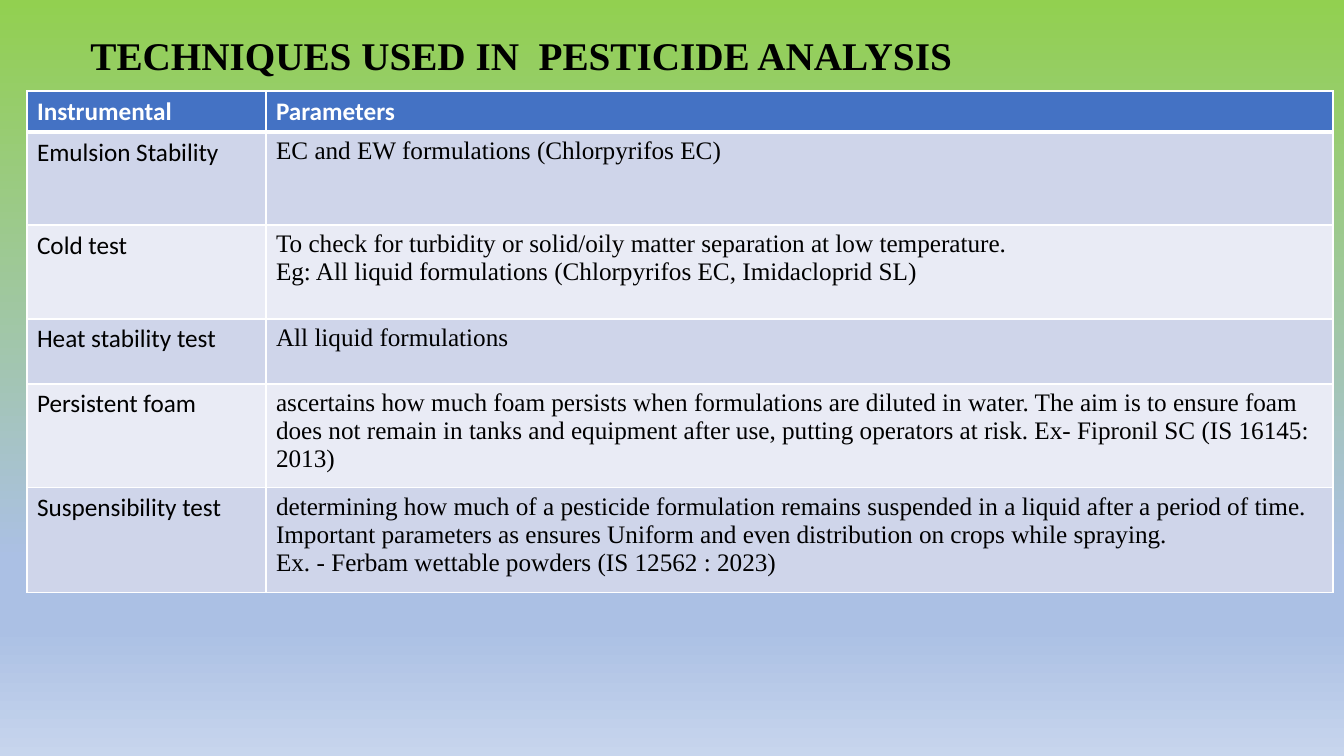
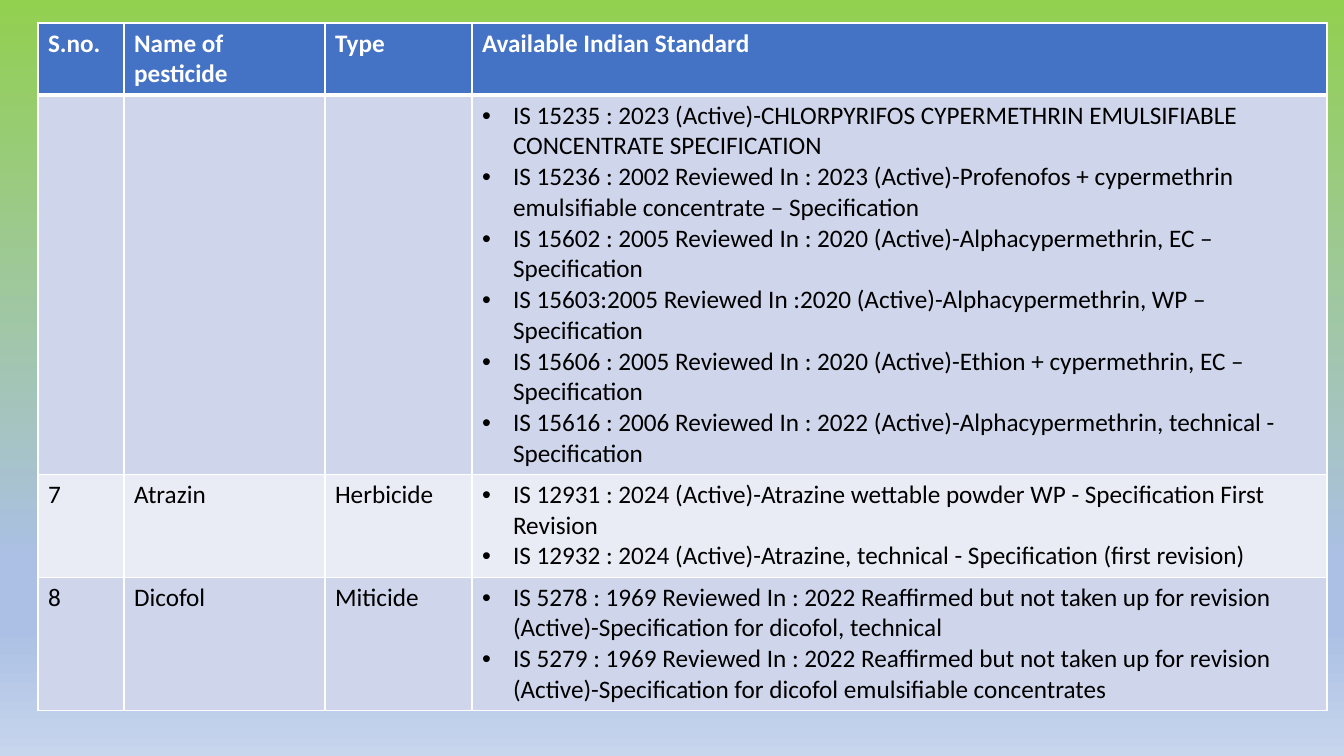
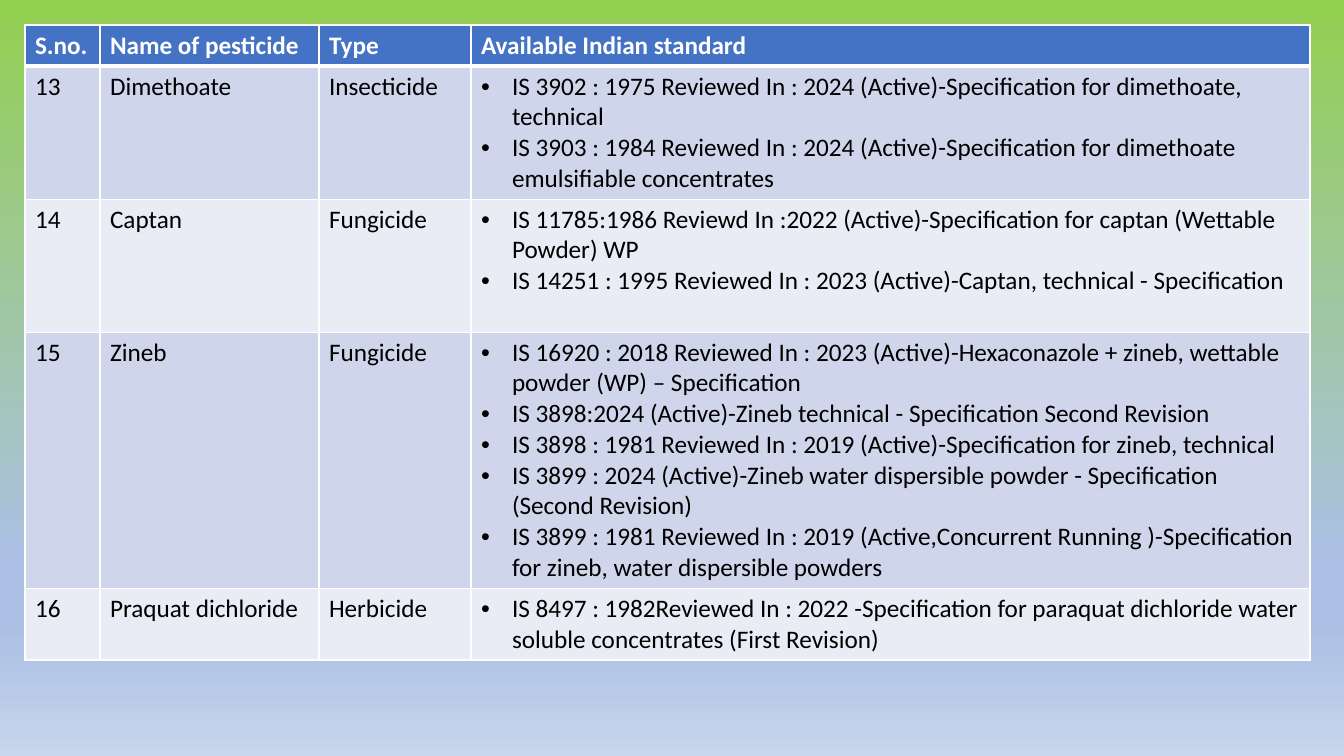
"""Build three slides of pesticide analysis tables."""
from dataclasses import dataclass

from lxml.etree import SubElement
from pptx import Presentation
from pptx.dml.color import RGBColor as Rgb
from pptx.enum.text import MSO_ANCHOR as Anchor, PP_ALIGN as Align
from pptx.oxml.ns import qn
from pptx.util import Emu, Pt

EMU_PER_PX = 914400 / 100.8
TITLE_ONLY, BLANK = 5, 6


@dataclass(frozen=True)
class Theme:
    sans: str = "Calibri"
    serif: str = "Times New Roman"
    ink: str = "000000"
    header_ink: str = "FFFFFF"
    header_fill: str = "4472C4"
    bands: tuple[str, ...] = ("CFD5EA", "E9EBF5")
    border: str = "FFFFFF"
    thin: int = 1
    thick: int = 3
    body_size: int = 18
    title_size: int = 28
    title_lead_size: int = 44
    backdrop: tuple[tuple[int, str], ...] = (
        (0, "92D050"), (74, "ABC0E4"), (83, "ABC0E4"), (100, "C7D5ED"))


@dataclass(frozen=True)
class Row:
    height: int
    labels: tuple[str, ...]
    details: tuple[str, ...]


@dataclass(frozen=True)
class Sheet:
    left: int
    top: int
    columns: tuple[int, ...]
    rows: tuple[Row, ...]
    detail_font: str
    bullet_indent: int = 0
    title: str = ""


THEME = Theme()

SHEETS = (
    Sheet(27, 91, (239, 1067), (
        Row(41, ("Instrumental",), ("Parameters",)),
        Row(93, ("Emulsion Stability",), ("EC and EW formulations (Chlorpyrifos EC)",)),
        Row(94, ("Cold test",), (
            "To check for turbidity or solid/oily matter separation at low temperature.",
            "Eg: All liquid formulations (Chlorpyrifos EC, Imidacloprid SL)")),
        Row(65, ("Heat stability test",), ("All liquid formulations",)),
        Row(104, ("Persistent foam",), (
            "ascertains how much foam persists when formulations are diluted in water. "
            "The aim is to ensure foam does not remain in tanks and equipment after use, "
            "putting operators at risk. Ex- Fipronil SC (IS 16145: 2013)",)),
        Row(105, ("Suspensibility test",), (
            "determining how much of a pesticide formulation remains suspended in a liquid "
            "after a period of time.",
            "Important parameters as ensures Uniform and even distribution on crops while spraying.",
            "Ex. - Ferbam wettable powders (IS 12562 : 2023)")),
    ), THEME.serif, title="TECHNIQUES USED IN  PESTICIDE ANALYSIS"),
    Sheet(38, 23, (86, 201, 147, 855), (
        Row(72, ("S.no.", "Name of pesticide", "Type"), ("Available Indian Standard",)),
        Row(379, ("", "", ""), (
            "IS 15235 : 2023 (Active)-CHLORPYRIFOS CYPERMETHRIN EMULSIFIABLE CONCENTRATE SPECIFICATION",
            "IS 15236 : 2002 Reviewed In : 2023 (Active)-Profenofos + cypermethrin "
            "emulsifiable concentrate – Specification",
            "IS 15602 : 2005 Reviewed In : 2020 (Active)-Alphacypermethrin, EC – Specification",
            "IS 15603:2005 Reviewed In :2020 (Active)-Alphacypermethrin, WP – Specification",
            "IS 15606 : 2005 Reviewed In : 2020 (Active)-Ethion + cypermethrin, EC – Specification",
            "IS 15616 : 2006 Reviewed In : 2022 (Active)-Alphacypermethrin, technical - Specification")),
        Row(103, ("7", "Atrazin", "Herbicide"), (
            "IS 12931 : 2024 (Active)-Atrazine wettable powder WP - Specification First Revision",
            "IS 12932 : 2024 (Active)-Atrazine, technical - Specification (first revision)")),
        Row(133, ("8", "Dicofol", "Miticide"), (
            "IS 5278 : 1969 Reviewed In : 2022 Reaffirmed but not taken up for revision "
            "(Active)-Specification for dicofol, technical",
            "IS 5279 : 1969 Reviewed In : 2022 Reaffirmed but not taken up for revision "
            "(Active)-Specification for dicofol emulsifiable concentrates")),
    ), THEME.sans, bullet_indent=31),
    Sheet(25, 25, (75, 219, 152, 839), (
        Row(41, ("S.no.", "Name of pesticide", "Type"), ("Available Indian standard",)),
        Row(133, ("13", "Dimethoate", "Insecticide"), (
            "IS 3902 : 1975 Reviewed In : 2024 (Active)-Specification for dimethoate, technical",
            "IS 3903 : 1984 Reviewed In : 2024 (Active)-Specification for dimethoate "
            "emulsifiable concentrates")),
        Row(133, ("14", "Captan", "Fungicide"), (
            "IS 11785:1986 Reviewd In :2022 (Active)-Specification for captan (Wettable Powder) WP",
            "IS 14251 : 1995 Reviewed In : 2023 (Active)-Captan, technical - Specification")),
        Row(256, ("15", "Zineb", "Fungicide"), (
            "IS 16920 : 2018 Reviewed In : 2023 (Active)-Hexaconazole + zineb, wettable powder "
            "(WP) – Specification",
            "IS 3898:2024 (Active)-Zineb technical - Specification Second Revision",
            "IS 3898 : 1981 Reviewed In : 2019 (Active)-Specification for zineb, technical",
            "IS 3899 : 2024 (Active)-Zineb water dispersible powder - Specification (Second Revision)",
            "IS 3899 : 1981 Reviewed In : 2019 (Active,Concurrent Running )-Specification "
            "for zineb, water dispersible powders")),
        Row(71, ("16", "Praquat dichloride", "Herbicide"), (
            "IS 8497 : 1982Reviewed In : 2022 -Specification for paraquat dichloride water "
            "soluble concentrates (First Revision)",)),
    ), THEME.sans, bullet_indent=31),
)


def px(length: int) -> Emu:
    """Turn pixels into EMU."""
    return Emu(round(length * EMU_PER_PX))


def add_span(para, text: str, size: int, font: str, color: str, bold: bool) -> None:
    """Append one formatted run."""
    span = para.add_run()
    span.text = text
    span.font.size = Pt(size)
    span.font.name = font
    span.font.bold = bold
    span.font.color.rgb = Rgb.from_string(color)


def paint_backdrop(master) -> None:
    """Give every slide the shared vertical gradient."""
    fill = master.background.fill
    fill.gradient()
    fill.gradient_angle = 270
    stops = next(master.element.iter(qn("a:gsLst")))
    for stop in list(stops):
        stops.remove(stop)
    for percent, color in THEME.backdrop:
        stop = SubElement(stops, qn("a:gs"), pos=str(percent * 1000))
        SubElement(stop, qn("a:srgbClr"), val=color)


def set_bullet(para, indent: int) -> None:
    """Hang a round bullet in front of a paragraph."""
    props = para._p.get_or_add_pPr()
    props.set("marL", str(px(indent)))
    props.set("indent", str(-px(indent)))
    SubElement(props, qn("a:buFont"), typeface="Arial")
    SubElement(props, qn("a:buChar"), char="•")


def set_borders(cell, top: int, bottom: int) -> None:
    """Draw the four cell borders, with widths in points."""
    props = cell._tc.get_or_add_tcPr()
    widths = {"a:lnL": THEME.thin, "a:lnR": THEME.thin, "a:lnT": top, "a:lnB": bottom}
    for position, (side, width) in enumerate(widths.items()):
        line = SubElement(props, qn(side), w=str(Pt(width)))
        paint = SubElement(line, qn("a:solidFill"))
        SubElement(paint, qn("a:srgbClr"), val=THEME.border)
        props.insert(position, line)


def fill_cell(cell, texts: tuple[str, ...], row: int, font: str, indent: int) -> None:
    """Write and format one table cell."""
    header = row == 0
    color = THEME.header_fill if header else THEME.bands[(row - 1) % len(THEME.bands)]
    cell.fill.solid()
    cell.fill.fore_color.rgb = Rgb.from_string(color)
    set_borders(cell, THEME.thick if row == 1 else THEME.thin,
                THEME.thick if header else THEME.thin)
    frame = cell.text_frame
    for index, text in enumerate(texts):
        para = frame.add_paragraph() if index else frame.paragraphs[0]
        if indent and not header:
            set_bullet(para, indent)
        if text:
            add_span(para, text, THEME.body_size, THEME.sans if header else font,
                     THEME.header_ink if header else THEME.ink, header)


def add_grid(page, sheet: Sheet) -> None:
    """Place the table of a sheet."""
    box = page.shapes.add_table(
        len(sheet.rows), len(sheet.columns), px(sheet.left), px(sheet.top),
        px(sum(sheet.columns)), px(sum(row.height for row in sheet.rows)))
    table = box.table
    for column, width in zip(table.columns, sheet.columns):
        column.width = px(width)
    for index, row in enumerate(sheet.rows):
        table.rows[index].height = px(row.height)
        for column, label in enumerate(row.labels):
            fill_cell(table.cell(index, column), (label,), index, THEME.sans, 0)
        fill_cell(table.cell(index, len(row.labels)), row.details, index,
                  sheet.detail_font, sheet.bullet_indent)


def set_title(page, text: str) -> None:
    """Move and format the title placeholder."""
    box = page.shapes.title
    box.left, box.top, box.width, box.height = px(65), px(-22), px(1159), px(146)
    box.text_frame.vertical_anchor = Anchor.MIDDLE
    para = box.text_frame.paragraphs[0]
    para.alignment = Align.LEFT
    para.line_spacing = 0.9
    for part, size in ((" ", THEME.title_lead_size), (text, THEME.title_size)):
        add_span(para, part, size, THEME.serif, THEME.ink, True)


def main() -> None:
    """Build and save the deck."""
    deck = Presentation()
    deck.slide_width, deck.slide_height = px(1344), px(756)
    paint_backdrop(deck.slide_master)
    for sheet in SHEETS:
        page = deck.slides.add_slide(deck.slide_layouts[TITLE_ONLY if sheet.title else BLANK])
        if sheet.title:
            set_title(page, sheet.title)
        add_grid(page, sheet)
    deck.save("out.pptx")


if __name__ == "__main__":
    main()
